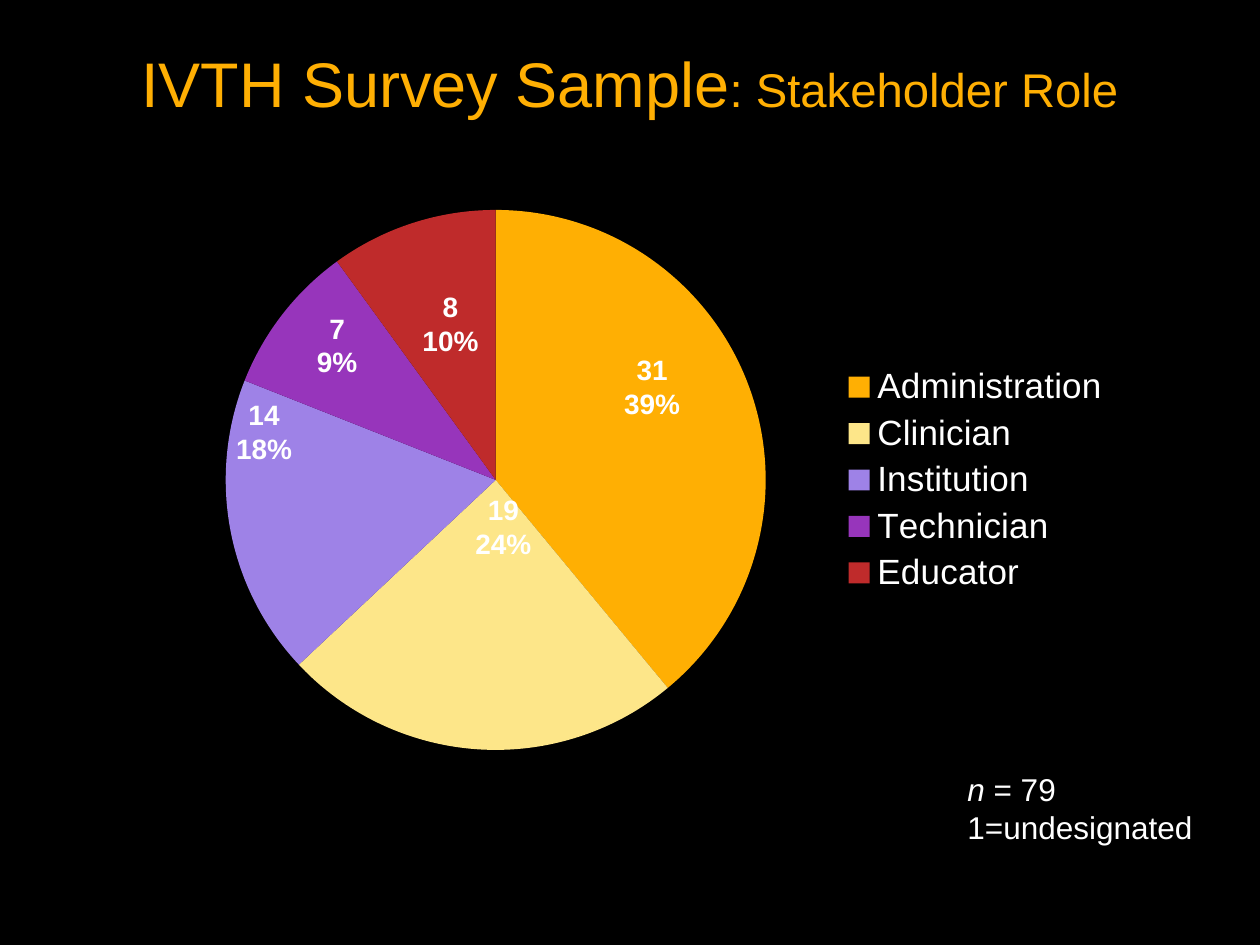
from dataclasses import dataclass

from lxml import etree
from pptx import Presentation
from pptx.chart.data import CategoryChartData
from pptx.dml.color import RGBColor
from pptx.enum.chart import XL_CHART_TYPE, XL_LEGEND_POSITION
from pptx.enum.text import MSO_ANCHOR, PP_ALIGN
from pptx.util import Inches, Pt

PIE = XL_CHART_TYPE.PIE
RIGHT = XL_LEGEND_POSITION.RIGHT
CENTER, LEFT = PP_ALIGN.CENTER, PP_ALIGN.LEFT
TOP = MSO_ANCHOR.TOP


@dataclass(frozen=True)
class Theme:
    face: str = "Arial"
    back: str = "000000"
    text: str = "FFFFFF"
    gold: str = "FFAF03"
    title: int = 36
    role: int = 27
    legend: int = 20
    note: int = 18
    label: int = 16
    chart: int = 10


theme = Theme()


def style(font, size, color, bold=False):
    font.name = theme.face
    font.size = Pt(size)
    font.bold = bold
    font.color.rgb = RGBColor.from_string(color)


def add_text(slide, box, lines, size, align, bold=False):
    frame = slide.shapes.add_textbox(*map(Inches, box)).text_frame
    frame.word_wrap = False
    frame.text = "\n".join(lines)
    for para in frame.paragraphs:
        para.alignment = align
        style(para.font, size, theme.text, bold)
    return frame


deck = Presentation()
deck.slide_width, deck.slide_height = Inches(10), Inches(7.5)
slide = deck.slides.add_slide(deck.slide_layouts[5])
slide.background.fill.solid()
slide.background.fill.fore_color.rgb = RGBColor.from_string(theme.back)

title = slide.shapes.title
title.left, title.top = Inches(0.5), Inches(0.3)
title.width, title.height = Inches(9), Inches(0.8)
title.text_frame.vertical_anchor = TOP
para = title.text_frame.paragraphs[0]
para.alignment = CENTER
for text, size in (("IVTH Survey Sample", theme.title), (": Stakeholder Role", theme.role)):
    run = para.add_run()
    run.text = text
    style(run.font, size, theme.gold)

roles = [
    ("Administration", 39, theme.gold, "31", 4.85, 2.75),
    ("Clinician", 24, "FDE689", "19", 3.67, 3.86),
    ("Institution", 18, "9E82E7", "14", 1.77, 3.11),
    ("Technician", 9, "9735BB", "7", 2.35, 2.42),
    ("Educator", 10, "BF2B2B", "8", 3.25, 2.25),
]

data = CategoryChartData()
data.categories = [role[0] for role in roles]
data.add_series("Series 1", [role[1] for role in roles])
place = map(Inches, (1.25, 1.53, 7.67, 4.56))
chart = slide.shapes.add_chart(PIE, *place, data).chart
chart.has_title = False
style(chart.font, theme.chart, theme.text)
chart.has_legend = True
chart.legend.position = RIGHT
chart.legend.include_in_layout = False
style(chart.legend.font, theme.legend, theme.text)
plot = chart.plots[0]
plot.vary_by_categories = True

area = chart._chartSpace.chart.plotArea
space = "{http://schemas.openxmlformats.org/drawingml/2006/chart}"
for old in area.findall(space + "layout"):
    area.remove(old)
layout = etree.Element(space + "layout")
area.insert(0, layout)
manual = etree.SubElement(layout, space + "manualLayout")
for tag, val in (("layoutTarget", "inner"), ("xMode", "edge"), ("yMode", "edge"),
                 ("x", "0.07"), ("y", "0.03"), ("w", "0.56"), ("h", "0.94")):
    etree.SubElement(manual, space + tag).set("val", val)

for i, (name, share, color, count, left, top) in enumerate(roles):
    fill = plot.series[0].points[i].format.fill
    fill.solid()
    fill.fore_color.rgb = RGBColor.from_string(color)
    add_text(slide, (left, top, 0.65, 0.64), (count, f"{share}%"), theme.label, CENTER, True)

note = add_text(slide, (7.58, 6.06, 2, 0.71), ("", "1=undesignated"), theme.note, LEFT)
for text, slant in (("n", True), (" = 79", False)):
    run = note.paragraphs[0].add_run()
    run.text = text
    run.font.italic = slant

deck.save("out.pptx")
